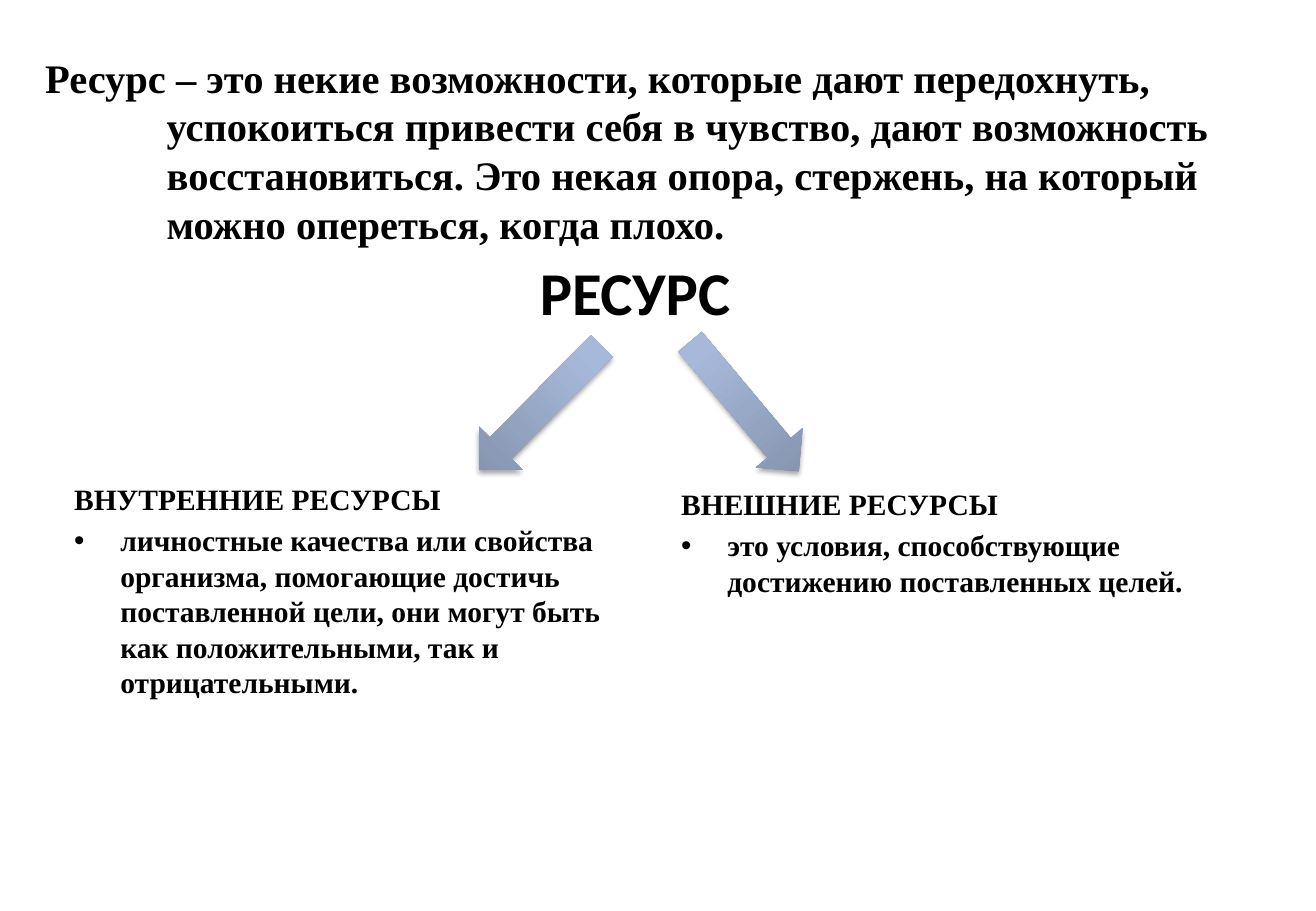
from lxml.etree import SubElement
from pptx import Presentation
from pptx.dml.color import RGBColor
from pptx.enum.shapes import MSO_SHAPE as Shape
from pptx.enum.text import MSO_ANCHOR as Anchor, MSO_AUTO_SIZE as Fit, PP_ALIGN as Align
from pptx.oxml import parse_xml
from pptx.oxml.ns import nsdecls, qn
from pptx.util import Pt

PX = 914400 / 121.5
SERIF = "Times New Roman"


def place(shape, *box):
    shape.left, shape.top, shape.width, shape.height = [round(n * PX) for n in box]


def write(para, text, size, face):
    run = para.add_run()
    run.text = text
    font = run.font
    font.size, font.name, font.bold = Pt(size), face, True
    font.color.rgb = RGBColor.from_string("000000")


deck = Presentation()
deck.slide_width, deck.slide_height = round(1316 * PX), round(911 * PX)
slide = deck.slides.add_slide(deck.slide_layouts[3])

title = slide.shapes.title
place(title, 33, 36, 1255, 228)
frame = title.text_frame
frame.auto_size = Fit.NONE
frame.vertical_anchor = Anchor.MIDDLE
para = frame.paragraphs[0]
para.alignment = Align.LEFT
props = para._p.get_or_add_pPr()
props.set("marL", "914400")
props.set("indent", "-914400")
write(para, "Ресурс – это некие возможности, которые дают передохнуть, "
      "успокоиться привести себя в чувство, дают возможность восстановиться. "
      "Это некая опора, стержень, на который можно опереться, когда плохо.", 24, SERIF)

lists = [
    (1, (62, 475, 564, 220), "ВНУТРЕННИЕ РЕСУРСЫ",
     "личностные качества или свойства организма, помогающие достичь поставленной "
     "цели, они могут быть как положительными, так и отрицательными."),
    (2, (669, 480, 609, 174), "ВНЕШНИЕ РЕСУРСЫ",
     "это условия, способствующие достижению поставленных целей."),
]
for key, box, head, text in lists:
    body = slide.placeholders[key]
    place(body, *box)
    frame = body.text_frame
    frame.auto_size = Fit.NONE
    first, item = frame.paragraphs[0], frame.add_paragraph()
    for para, words in ((first, head), (item, text)):
        props = para._p.get_or_add_pPr()
        props.set("marL", "347472")
        props.set("indent", "-347472")
        if para is first:
            SubElement(props, qn("a:buNone"))
            para.space_before = Pt(0)
        else:
            SubElement(props, qn("a:buChar")).set("char", "•")
            para.space_before = Pt(3.5)
        write(para, words, 17.5, SERIF)

label = slide.shapes.add_textbox(0, 0, 0, 0)
place(label, 470, 249, 330, 86)
frame = label.text_frame
frame.word_wrap = True
frame.auto_size = Fit.SHAPE_TO_FIT_TEXT
para = frame.paragraphs[0]
para.alignment = Align.CENTER
write(para, "РЕСУРС", 36, "Calibri")

stops = "".join(
    f'<a:gs pos="{pos}000"><a:srgbClr val="{hue}"/></a:gs>'
    for pos, hue in ((0, "808FA8"), (80, "A7B9DA"), (100, "A6BADC")))
fade = (f'<a:gradFill {nsdecls("a")} rotWithShape="1"><a:gsLst>{stops}</a:gsLst>'
        '<a:lin ang="16200000" scaled="0"/></a:gradFill>')
shade = (f'<a:effectLst {nsdecls("a")}><a:outerShdw blurRad="39370" dist="22860" '
         'dir="5400000" rotWithShape="0"><a:srgbClr val="000000">'
         '<a:alpha val="35000"/></a:srgbClr></a:outerShdw></a:effectLst>')

for box, turn in (((510, 321, 61, 174), 44.7), ((714, 322, 61, 169), 320)):
    arrow = slide.shapes.add_shape(Shape.DOWN_ARROW, 0, 0, 0, 0)
    place(arrow, *box)
    arrow.rotation = turn
    arrow.line.fill.background()
    props = arrow._element.spPr
    props.find(qn("a:prstGeom")).addnext(parse_xml(fade))
    props.append(parse_xml(shade))

deck.save("out.pptx")
